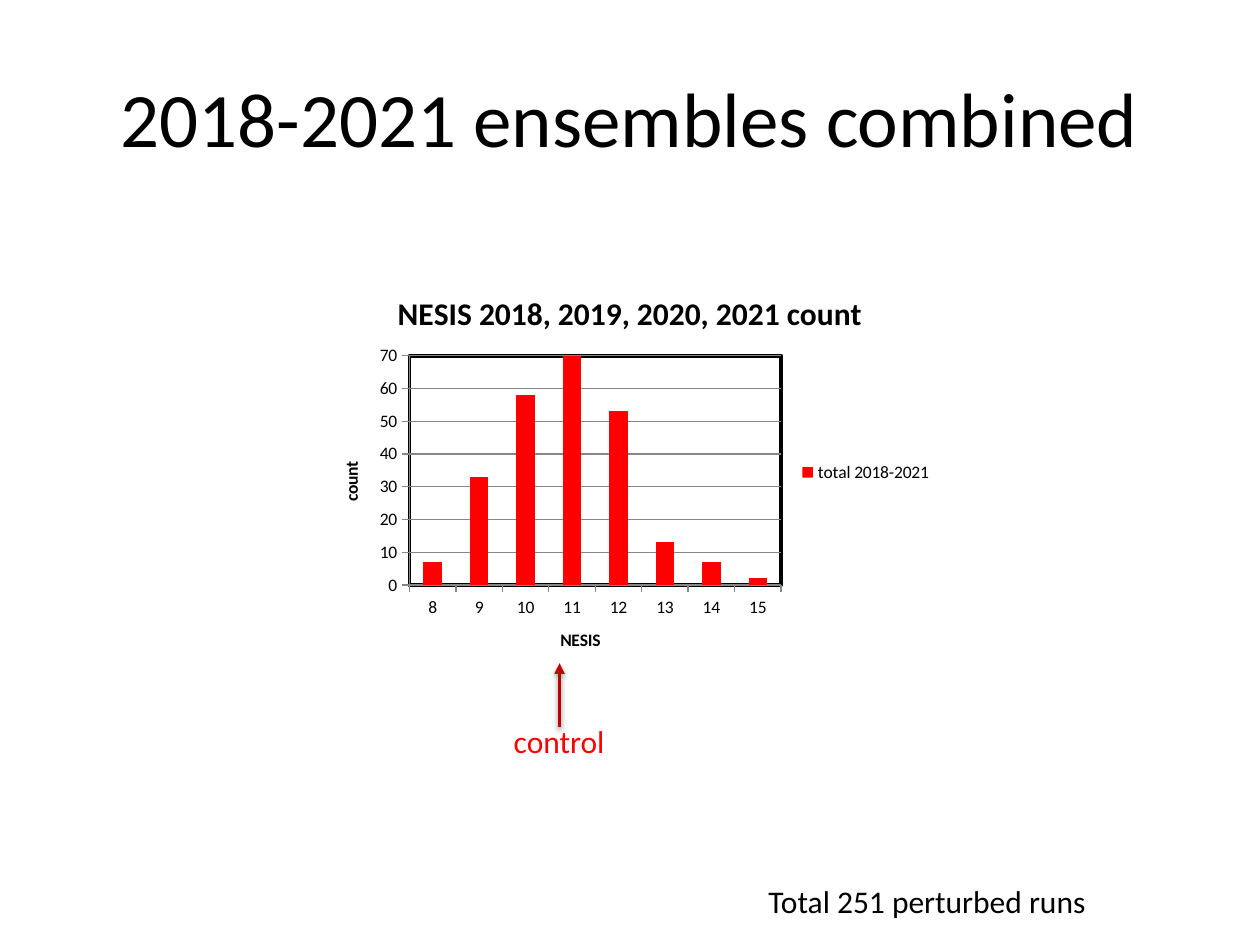
"""Build a slide with the combined 2018-2021 ensemble count chart."""
from pptx import Presentation
from pptx.chart.data import CategoryChartData
from pptx.dml.color import RGBColor
from pptx.enum.chart import XL_CHART_TYPE, XL_LEGEND_POSITION, XL_TICK_MARK
from pptx.enum.shapes import MSO_CONNECTOR
from pptx.enum.text import MSO_ANCHOR, MSO_AUTO_SIZE, PP_ALIGN
from pptx.oxml import parse_xml
from pptx.oxml.ns import nsdecls, qn
from pptx.util import Pt

COLUMNS = XL_CHART_TYPE.COLUMN_CLUSTERED
RIGHT = XL_LEGEND_POSITION.RIGHT
OUTSIDE, NO_TICK = XL_TICK_MARK.OUTSIDE, XL_TICK_MARK.NONE
STRAIGHT = MSO_CONNECTOR.STRAIGHT
MIDDLE = MSO_ANCHOR.MIDDLE
FIT_SHAPE = MSO_AUTO_SIZE.SHAPE_TO_FIT_TEXT
CENTER = PP_ALIGN.CENTER

FONT = "Calibri"
BLACK = RGBColor(0x00, 0x00, 0x00)
RED = RGBColor(0xFF, 0x00, 0x00)
DARK_RED = RGBColor(0xC0, 0x00, 0x00)
GRAY = RGBColor(0x86, 0x86, 0x86)

TITLE = "2018-2021 ensembles combined"
CHART_TITLE = "NESIS 2018, 2019, 2020, 2021 count"
SERIES = "total 2018-2021"
COUNTS = {"8": 7, "9": 33, "10": 58, "11": 79, "12": 53, "13": 13, "14": 7, "15": 2}
LABELS = [
    ("control", RED, (286.5, 409, 67, 29)),
    ("Total 251 perturbed runs", BLACK, (432, 500.5, 198, 29)),
]
CHART_BOX = (180, 155, 360, 230)
ARROW = (319.75, 415.5, 319.75, 379)
PLOT = {"x": 0.15, "y": 0.21, "w": 0.59, "h": 0.57}


def set_text(tf, text, size=18, color=BLACK, bold=False, align=None):
    p = tf.paragraphs[0]
    p.alignment = align
    r = p.add_run()
    r.text = text
    r.font.name, r.font.size, r.font.bold = FONT, Pt(size), bold
    r.font.color.rgb = color


def add_label(s, text, color, box):
    tf = s.shapes.add_textbox(*map(Pt, box)).text_frame
    tf.word_wrap, tf.auto_size = False, FIT_SHAPE
    set_text(tf, text, color=color)


def add_arrow(s):
    arrow = s.shapes.add_connector(STRAIGHT, *map(Pt, ARROW))
    arrow.line.color.rgb, arrow.line.width = DARK_RED, Pt(2)
    arrow.line._get_or_add_ln().append(parse_xml(f'<a:tailEnd {nsdecls("a")} type="triangle"/>'))
    arrow._element.spPr.append(parse_xml(
        f'<a:effectLst {nsdecls("a")}><a:outerShdw blurRad="{Pt(3.1)}" dist="{Pt(1.6)}" '
        'dir="5400000" rotWithShape="0"><a:srgbClr val="000000"><a:alpha val="38000"/>'
        '</a:srgbClr></a:outerShdw></a:effectLst>'))


def format_plot_area(chart):
    area = chart._chartSpace.chart.plotArea
    for old in area.findall(qn("c:layout")):
        area.remove(old)
    places = "".join(f'<c:{k} val="{v}"/>' for k, v in PLOT.items())
    area.insert(0, parse_xml(
        f'<c:layout {nsdecls("c")}><c:manualLayout><c:layoutTarget val="inner"/>'
        f'<c:xMode val="edge"/><c:yMode val="edge"/>{places}</c:manualLayout></c:layout>'))
    area.append(parse_xml(
        f'<c:spPr {nsdecls("c", "a")}><a:solidFill><a:srgbClr val="FFFFFF"/></a:solidFill>'
        f'<a:ln w="{Pt(2.25)}"><a:solidFill><a:srgbClr val="000000"/></a:solidFill></a:ln></c:spPr>'))


def add_chart(s):
    data = CategoryChartData()
    data.categories = list(COUNTS)
    data.add_series(SERIES, list(COUNTS.values()))
    chart = s.shapes.add_chart(COLUMNS, *map(Pt, CHART_BOX), data).chart
    chart.font.name, chart.font.size = FONT, Pt(10)
    chart.font.color.rgb = BLACK
    chart.has_title = True
    set_text(chart.chart_title.text_frame, CHART_TITLE, bold=True)
    chart.chart_title.include_in_layout = False
    chart.has_legend = True
    chart.legend.position, chart.legend.include_in_layout = RIGHT, False
    plot = chart.plots[0]
    plot.gap_width, plot.vary_by_categories = 150, False
    fill = plot.series[0].format.fill
    fill.solid()
    fill.fore_color.rgb = RED
    for axis, name in ((chart.category_axis, "NESIS"), (chart.value_axis, "count")):
        set_text(axis.axis_title.text_frame, name, size=10, bold=True)
        axis.major_tick_mark, axis.minor_tick_mark = OUTSIDE, NO_TICK
        axis.format.line.color.rgb = GRAY
    values = chart.value_axis
    values.minimum_scale, values.maximum_scale, values.major_unit = 0, 70, 10
    values.has_major_gridlines = True
    values.major_gridlines.format.line.color.rgb = GRAY
    format_plot_area(chart)


def main():
    prs = Presentation()
    prs.slide_width, prs.slide_height = Pt(720), Pt(540)
    s = prs.slides.add_slide(prs.slide_layouts[5])
    title = s.shapes.title
    title.left, title.top, title.width, title.height = map(Pt, (36, 21.6, 648, 90))
    title.text_frame.vertical_anchor = MIDDLE
    set_text(title.text_frame, TITLE, size=44, align=CENTER)
    add_arrow(s)
    add_label(s, *LABELS[0])
    add_chart(s)
    add_label(s, *LABELS[1])
    prs.save("out.pptx")


if __name__ == "__main__":
    main()
